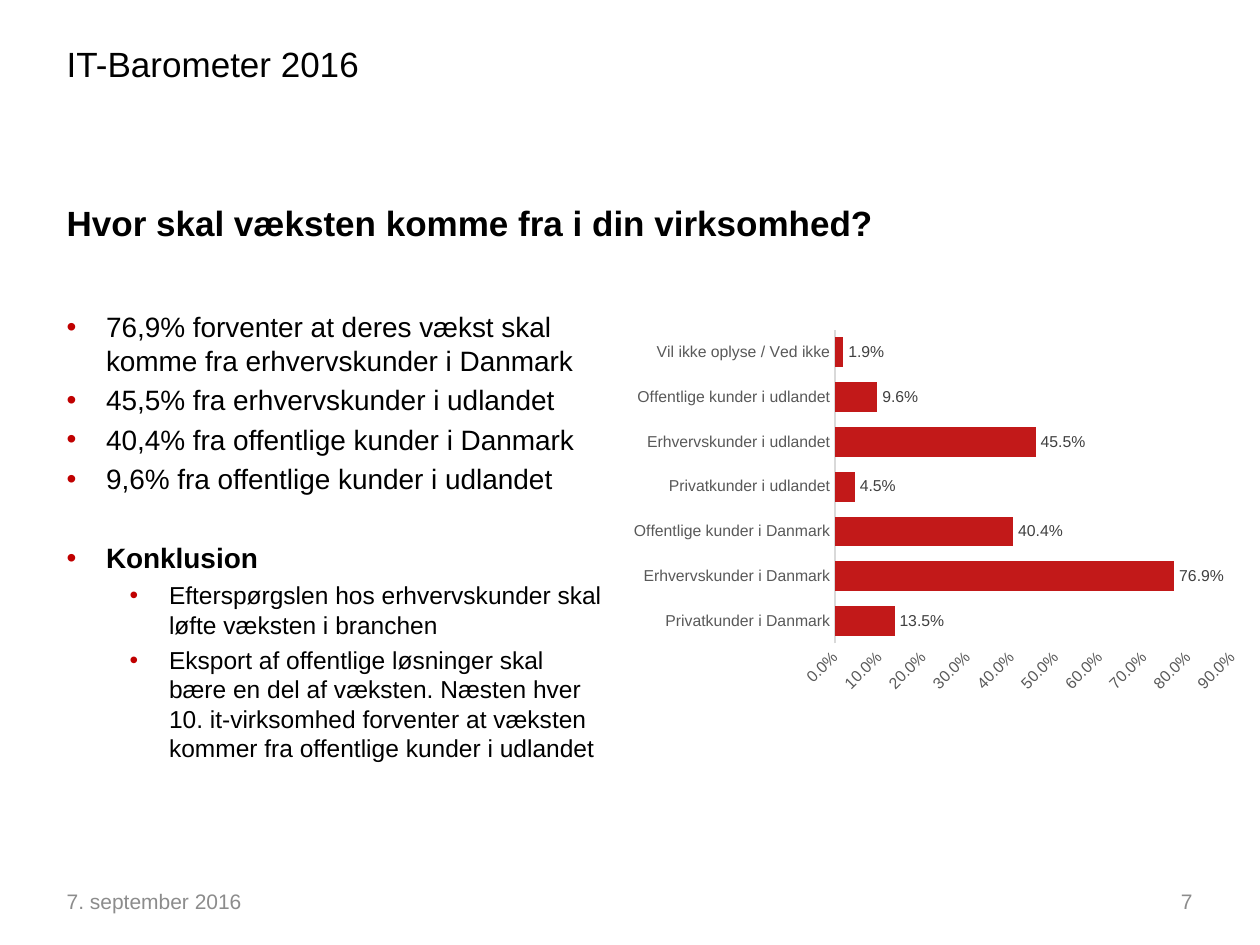
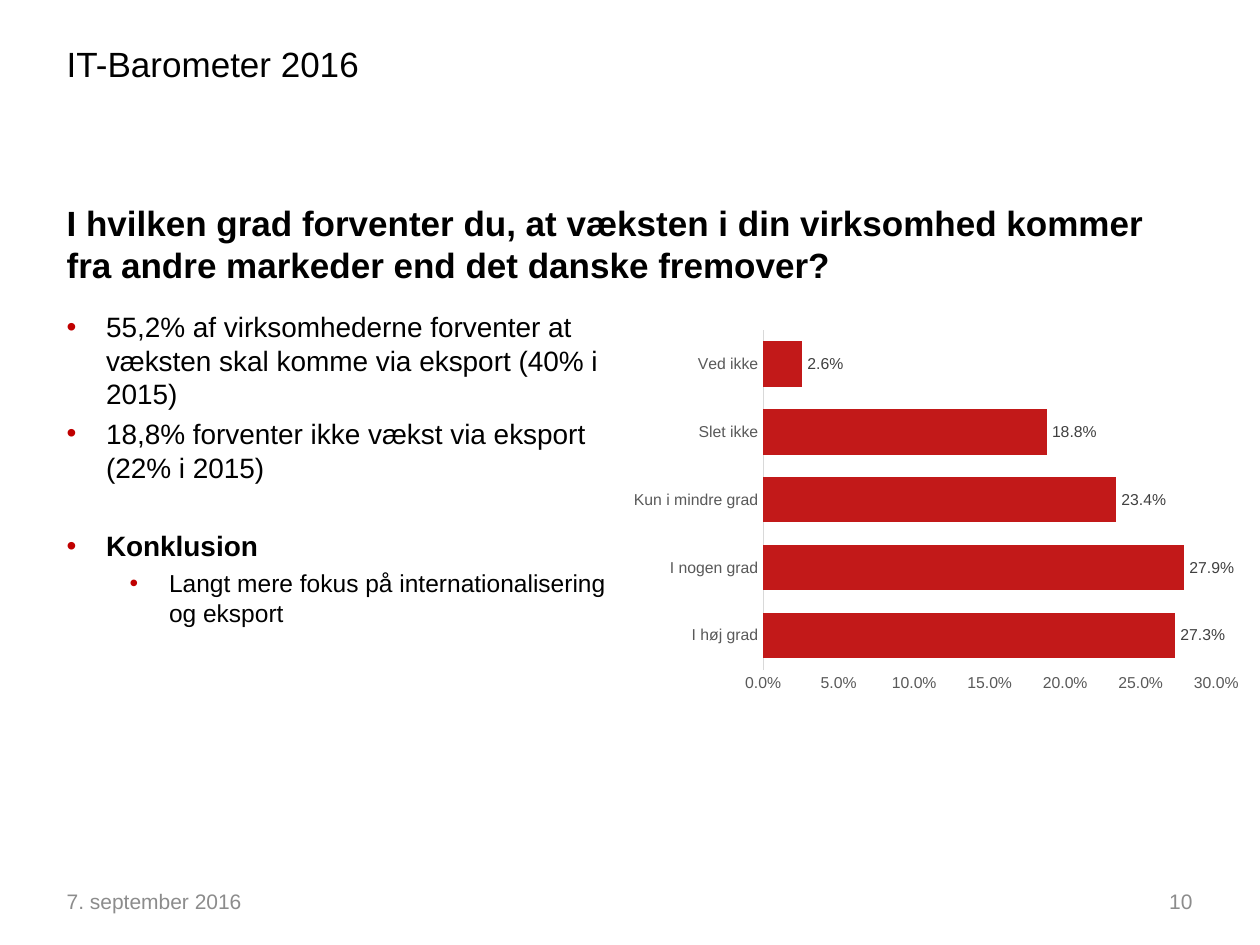
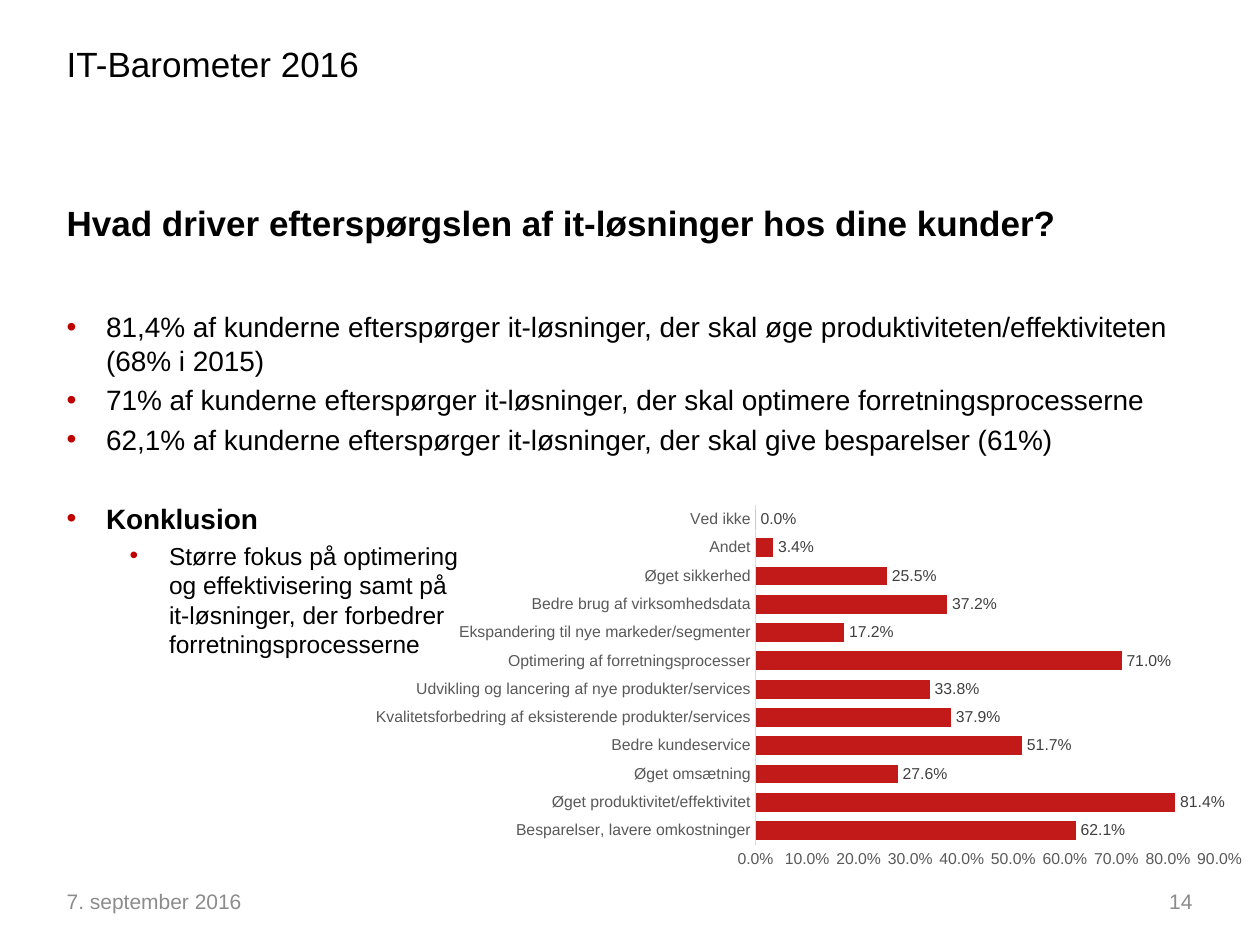
from lxml.etree import SubElement
from pptx import Presentation
from pptx.chart.data import CategoryChartData as ChartData
from pptx.dml.color import RGBColor
from pptx.enum.chart import XL_CHART_TYPE as CT, XL_LABEL_POSITION as LP, XL_TICK_MARK as TM
from pptx.enum.text import MSO_ANCHOR as MA, PP_ALIGN as PA
from pptx.oxml.ns import qn
from pptx.util import Pt

COLORS = {"text": "000000", "footer": "8C8C8C", "bullet": "C00000", "bar": "C21919",
          "axis": "595959", "axis_line": "D9D9D9", "label": "404040"}
LEFT, WIDTH = 31, 648
PERCENT = "0.0%"
GAP = 3.4
TITLE = {"size": 20, "color": "text"}
HEADING = {"size": 20, "color": "text", "bold": True}
FOOTER = {"size": 12, "color": "footer"}
POINT = {"font": {"size": 16, "color": "text"}, "indent": 22.5, "before": GAP}
CONCLUSION = {"font": {"size": 16, "color": "text", "bold": True},
              "indent": 22.5, "before": 25.8}
DETAIL = {"font": {"size": 14, "color": "text"}, "indent": 58.5, "before": GAP}

SLIDES = [
    {"number": 7,
     "heading": "Hvor skal væksten komme fra i din virksomhed?",
     "body": (323.5, 327),
     "points": ["76,9% forventer at deres vækst skal komme fra erhvervskunder i Danmark",
                "45,5% fra erhvervskunder i udlandet",
                "40,4% fra offentlige kunder i Danmark",
                "9,6% fra offentlige kunder i udlandet"],
     "details": ["Efterspørgslen hos erhvervskunder skal løfte væksten i branchen",
                 "Eksport af offentlige løsninger skal bære en del af væksten. Næsten hver "
                 "10. it-virksomhed forventer at væksten kommer fra offentlige kunder i udlandet"],
     "chart": (355, 184.3, 360, 216),
     "values": {"Privatkunder i Danmark": 0.135,
                "Erhvervskunder i Danmark": 0.769,
                "Offentlige kunder i Danmark": 0.404,
                "Privatkunder i udlandet": 0.045,
                "Erhvervskunder i udlandet": 0.455,
                "Offentlige kunder i udlandet": 0.096,
                "Vil ikke oplyse / Ved ikke": 0.019}},
    {"number": 10,
     "heading": "I hvilken grad forventer du, at væksten i din virksomhed kommer "
                "fra andre markeder end det danske fremover?",
     "body": (323.5, 255),
     "points": ["55,2% af virksomhederne forventer at væksten skal komme via eksport "
                "(40% i 2015)",
                "18,8% forventer ikke vækst via eksport (22% i 2015)"],
     "details": ["Langt mere fokus på internationalisering og eksport"],
     "chart": (355, 184.3, 360, 216),
     "values": {"I høj grad": 0.273,
                "I nogen grad": 0.279,
                "Kun i mindre grad": 0.234,
                "Slet ikke": 0.188,
                "Ved ikke": 0.026}},
    {"number": 14,
     "heading": "Hvad driver efterspørgslen af it-løsninger hos dine kunder?",
     "body": (WIDTH, 255),
     "points": ["81,4% af kunderne efterspørger it-løsninger, der skal øge "
                "produktiviteten/effektiviteten (68% i 2015)",
                "71% af kunderne efterspørger it-løsninger, der skal optimere "
                "forretningsprocesserne",
                "62,1% af kunderne efterspørger it-løsninger, der skal give besparelser (61%)"],
     "details": ["Større fokus på optimering\vog effektivisering samt på\v"
                 "it-løsninger, der forbedrer\vforretningsprocesserne"],
     "chart": (204.5, 284.4, 515.5, 216),
     "values": {"Besparelser, lavere omkostninger": 0.621,
                "Øget produktivitet/effektivitet": 0.814,
                "Øget omsætning": 0.276,
                "Bedre kundeservice": 0.517,
                "Kvalitetsforbedring af eksisterende produkter/services": 0.379,
                "Udvikling og lancering af nye produkter/services": 0.338,
                "Optimering af forretningsprocesser": 0.71,
                "Ekspandering til nye markeder/segmenter": 0.172,
                "Bedre brug af virksomhedsdata": 0.372,
                "Øget sikkerhed": 0.255,
                "Andet": 0.034,
                "Ved ikke": 0}},
]


def rgb(name):
    return RGBColor.from_string(COLORS[name])


def set_attrs(target, values):
    for name, value in values.items():
        setattr(target, name, value)


def set_font(font, size, color, bold=False):
    set_attrs(font, {"name": "Arial", "size": Pt(size), "bold": bold})
    font.color.rgb = rgb(color)


def fill_paragraph(p, text, font):
    p.text = text
    for r in p.runs:
        set_font(r.font, **font)


def add_box(s, box):
    tf = s.shapes.add_textbox(*map(Pt, box)).text_frame
    tf.word_wrap = True
    return tf


def add_text(s, box, text, font, anchor=MA.TOP, align=PA.LEFT):
    tf = add_box(s, box)
    tf.vertical_anchor = anchor
    p = tf.paragraphs[0]
    p.alignment = align
    fill_paragraph(p, text, font)


def add_bullet(p, indent):
    pPr = p._p.get_or_add_pPr()
    pPr.set("marL", str(Pt(indent)))
    pPr.set("indent", str(-Pt(22.5)))
    color = SubElement(pPr, qn("a:buClr"))
    SubElement(color, qn("a:srgbClr"), val=COLORS["bullet"])
    SubElement(pPr, qn("a:buFont"), typeface="Arial")
    SubElement(pPr, qn("a:buChar"), char="•")


def add_bullets(s, size, points, details):
    tf = add_box(s, (LEFT, 173.5, *size))
    items = [(text, POINT) for text in points]
    items += [("Konklusion", CONCLUSION)]
    items += [(text, DETAIL) for text in details]
    for i, (text, style) in enumerate(items):
        p = tf.add_paragraph() if i else tf.paragraphs[0]
        add_bullet(p, style["indent"])
        p.space_before = Pt(style["before"] if i else 0)
        fill_paragraph(p, text, style["font"])


def add_bar_chart(s, box, values):
    data = ChartData(number_format=PERCENT)
    data.categories = list(values)
    data.add_series("Series 1", list(values.values()))
    chart = s.shapes.add_chart(CT.BAR_CLUSTERED, *map(Pt, box), data).chart
    set_attrs(chart, {"has_legend": False, "has_title": False})
    set_font(chart.font, 10, "text")

    for axis in (chart.category_axis, chart.value_axis):
        set_attrs(axis, {"has_major_gridlines": False, "major_tick_mark": TM.NONE,
                         "minor_tick_mark": TM.NONE})
        set_font(axis.tick_labels.font, 9, "axis")
    line = chart.category_axis.format.line
    line.color.rgb = rgb("axis_line")
    line.width = Pt(0.75)
    chart.value_axis.format.line.fill.background()
    number = {"number_format": PERCENT, "number_format_is_linked": False}
    set_attrs(chart.value_axis.tick_labels, number)

    plot = chart.plots[0]
    set_attrs(plot, {"gap_width": 50, "vary_by_categories": False, "has_data_labels": True})
    set_attrs(plot.data_labels, {**number, "show_value": True, "position": LP.OUTSIDE_END})
    set_font(plot.data_labels.font, 9, "label")
    fill = plot.series[0].format.fill
    fill.solid()
    fill.fore_color.rgb = rgb("bar")


def add_frame(s, number, heading):
    add_text(s, (LEFT, 500.4, 168, 29), "7. september 2016", FOOTER, MA.MIDDLE)
    add_text(s, (LEFT, 21, 228, 29), "IT-Barometer 2016", TITLE)
    add_text(s, (520.5, 500.4, 168, 29), str(number), FOOTER, MA.MIDDLE, PA.RIGHT)
    add_text(s, (LEFT, 111.6, WIDTH, 40), heading, HEADING)


def main():
    prs = Presentation()
    set_attrs(prs, {"slide_width": Pt(720), "slide_height": Pt(540)})
    for page in SLIDES:
        s = prs.slides.add_slide(prs.slide_layouts[6])
        add_frame(s, page["number"], page["heading"])
        add_bullets(s, page["body"], page["points"], page["details"])
        add_bar_chart(s, page["chart"], page["values"])
    prs.save("out.pptx")


if __name__ == "__main__":
    main()
